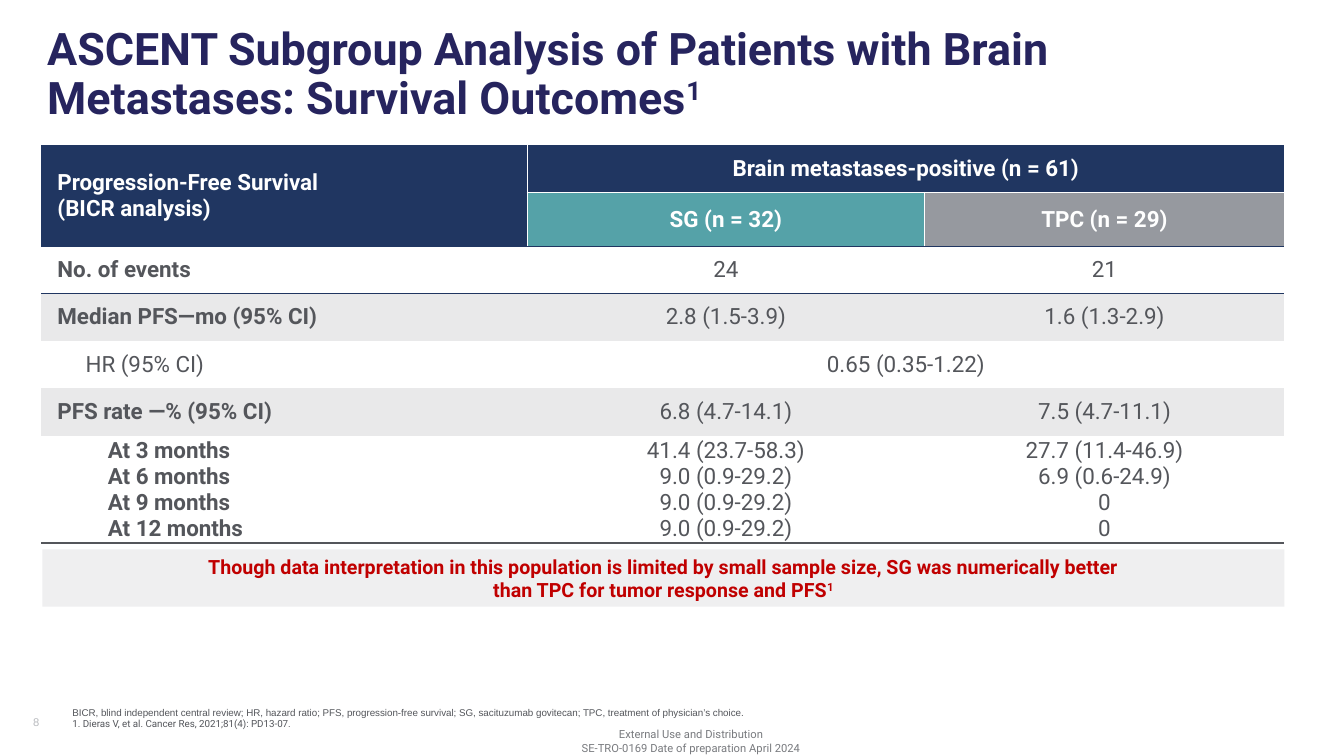
import dataclasses

import pptx
import pptx.dml.color
import pptx.enum.shapes
import pptx.enum.text
import pptx.oxml
import pptx.oxml.ns
import pptx.util

ALIGN = pptx.enum.text.PP_ALIGN
ANCHOR = pptx.enum.text.MSO_ANCHOR


@dataclasses.dataclass(frozen=True)
class Theme:
    heading_font: str = "Roboto"
    note_font: str = "Arial"
    title: str = "26245E"
    navy: str = "203661"
    teal: str = "55A2A8"
    gray: str = "96999F"
    stripe: str = "E9E9EA"
    white: str = "FFFFFF"
    body: str = "54565B"
    footer: str = "787A7E"
    number: str = "B9BBBF"
    banner: str = "DCDDDF"
    alert: str = "C00000"
    title_size: int = 32
    table_size: int = 16
    banner_size: int = 14
    footer_size: int = 8
    note_size: int = 7


THEME = Theme()
GRID = pptx.util.Inches(0.1)
TABLE_COLUMNS = (48.2, 39.4, 35.7)
TABLE_ROWS = (4.7, 5.1, 4.7, 4.7, 4.7, 4.7, 10.4)
HEADER_ROWS = 2
OUTCOMES = (
    ("Progression-Free Survival\v(BICR analysis)", "Brain metastases-positive (n = 61)", ""),
    ("", "SG (n = 32)", "TPC (n = 29)"),
    ("No. of events", "24", "21"),
    ("Median PFS—mo (95% CI)", "2.8 (1.5-3.9)", "1.6 (1.3-2.9)"),
    ("HR (95% CI)", "0.65 (0.35-1.22)", ""),
    ("PFS rate —% (95% CI)", "6.8 (4.7-14.1)", "7.5 (4.7-11.1)"),
    (
        "At 3 months\nAt 6 months\nAt 9 months\nAt 12 months",
        "41.4 (23.7‑58.3)\n9.0 (0.9‑29.2)\n9.0 (0.9‑29.2)\n9.0 (0.9‑29.2)",
        "27.7 (11.4‑46.9)\n6.9 (0.6‑24.9)\n0\n0",
    ),
)
HR_ROW, RATES_ROW = 4, 6
STRIPED_ROWS = (3, 5)
ROW_INDENTS = {HR_ROW: 2.8, RATES_ROW: 5}
RULES = {0: (THEME.navy, 1), 2: (THEME.navy, 1), 3: (THEME.navy, 1), 7: (THEME.body, 2)}


def grid(*counts):
    return [round(count * GRID) for count in counts]


def rgb(color):
    return pptx.dml.color.RGBColor.from_string(color)


def style_paragraph(paragraph, size, color, bold=False, align=ALIGN.LEFT, font=THEME.heading_font):
    paragraph.alignment = align
    paragraph.font.name = font
    paragraph.font.size = pptx.util.Pt(size)
    paragraph.font.bold = bold
    paragraph.font.color.rgb = rgb(color)


def add_superscript(paragraph, text):
    run = paragraph.add_run()
    run.text = text
    run.font._element.set("baseline", "30000")


def add_text(slide, box, text, anchor):
    frame = slide.shapes.add_textbox(*grid(*box)).text_frame
    frame.word_wrap = True
    frame.vertical_anchor = anchor
    frame.text = text
    return frame.paragraphs


def add_title(slide):
    text = "ASCENT Subgroup Analysis of Patients with Brain Metastases: Survival Outcomes"
    paragraph = add_text(slide, (3.7, 2.2, 125.6, 10), text, ANCHOR.TOP)[0]
    add_superscript(paragraph, "1")
    paragraph.line_spacing = 0.9
    style_paragraph(paragraph, THEME.title_size, THEME.title, bold=True)


def horizontal_rule(line, column):
    if line == 1 and column > 0:
        return THEME.white, 1
    return RULES.get(line)


def vertical_rule(line, row):
    if (line == 1 and row < HEADER_ROWS) or (line == 2 and row == 1):
        return THEME.white, 1
    return None


def set_borders(cell, row, column):
    sides = {
        "lnL": vertical_rule(column, row),
        "lnR": vertical_rule(column + 1, row),
        "lnT": horizontal_rule(row, column),
        "lnB": horizontal_rule(row + 1, column),
    }
    properties = cell._tc.get_or_add_tcPr()
    namespace = pptx.oxml.ns.nsdecls("a")
    for position, (side, rule) in enumerate(sides.items()):
        if rule:
            color, points = rule
            width = pptx.util.Pt(points)
            paint = f'<a:solidFill><a:srgbClr val="{color}"/></a:solidFill>'
        else:
            width, paint = 0, "<a:noFill/>"
        border = pptx.oxml.parse_xml(f'<a:{side} {namespace} w="{width}">{paint}</a:{side}>')
        properties.insert(position, border)


def cell_fill(row, column):
    if row == 1 and column > 0:
        return (THEME.teal, THEME.gray)[column - 1]
    if row < HEADER_ROWS:
        return THEME.navy
    return THEME.stripe if row in STRIPED_ROWS else THEME.white


def fill_cell(cell, row, column, text):
    cell.fill.solid()
    cell.fill.fore_color.rgb = rgb(cell_fill(row, column))
    cell.vertical_anchor = ANCHOR.MIDDLE
    cell.margin_left, cell.margin_right = grid(1.6, 1.6)
    cell.margin_top = cell.margin_bottom = 0
    cell.text = text
    header = row < HEADER_ROWS
    for paragraph in cell.text_frame.paragraphs:
        if column == 0 and row in ROW_INDENTS:
            indent = grid(ROW_INDENTS[row])[0]
            properties = paragraph._p.get_or_add_pPr()
            properties.set("marL", str(indent))
            properties.set("indent", "0")
        style_paragraph(
            paragraph,
            THEME.table_size,
            THEME.white if header else THEME.body,
            bold=header or (column == 0 and row != HR_ROW),
            align=ALIGN.CENTER if column else ALIGN.LEFT,
        )
    set_borders(cell, row, column)


def add_outcomes(slide):
    box = grid(4.1, 14.4, sum(TABLE_COLUMNS), sum(TABLE_ROWS))
    table = slide.shapes.add_table(len(TABLE_ROWS), len(TABLE_COLUMNS), *box).table
    table.first_row = table.horz_banding = False
    for column, width in zip(table.columns, grid(*TABLE_COLUMNS)):
        column.width = width
    for row, height in zip(table.rows, grid(*TABLE_ROWS)):
        row.height = height
    for row, texts in enumerate(OUTCOMES):
        for column, text in enumerate(texts):
            fill_cell(table.cell(row, column), row, column, text)
    table.cell(0, 0).merge(table.cell(1, 0))
    for row in (0, HR_ROW):
        table.cell(row, 1).merge(table.cell(row, 2))


def add_banner(slide):
    shape = slide.shapes.add_shape(
        pptx.enum.shapes.MSO_SHAPE.RECTANGLE, *grid(4.2, 54.5, 123.2, 5.7)
    )
    shape.shadow.inherit = False
    shape.line.fill.background()
    shape.fill.solid()
    shape.fill.fore_color.rgb = rgb(THEME.banner)
    color = shape._element.spPr.find(".//" + pptx.oxml.ns.qn("a:srgbClr"))
    namespace = pptx.oxml.ns.nsdecls("a")
    color.append(pptx.oxml.parse_xml(f'<a:alpha {namespace} val="45000"/>'))
    frame = shape.text_frame
    frame.word_wrap = True
    frame.vertical_anchor = ANCHOR.MIDDLE
    frame.text = (
        "Though data interpretation in this population is limited by small sample size, "
        "SG was numerically better\vthan TPC for tumor response and PFS"
    )
    paragraph = frame.paragraphs[0]
    add_superscript(paragraph, "1")
    style_paragraph(paragraph, THEME.banner_size, THEME.alert, bold=True, align=ALIGN.CENTER)


def add_notes_and_footer(slide):
    notes = (
        "BICR, blind independent central review; HR, hazard ratio; PFS, progression‑free survival; "
        "SG, sacituzumab govitecan; TPC, treatment of physician’s choice.\n"
        "1. Dieras V, et al. Cancer Res, 2021;81(4): PD13-07."
    )
    paragraphs = add_text(slide, (6.2, 65.2, 118, 7.7), notes, ANCHOR.BOTTOM)
    for paragraph, font in zip(paragraphs, (THEME.note_font, THEME.heading_font)):
        style_paragraph(paragraph, THEME.note_size, THEME.body, font=font)
    footer = "External Use and Distribution\nSE-TRO-0169 Date of preparation April 2024"
    for paragraph in add_text(slide, (51.4, 71.9, 34.3, 3.2), footer, ANCHOR.MIDDLE):
        style_paragraph(paragraph, THEME.footer_size, THEME.footer, align=ALIGN.CENTER)
    number = add_text(slide, (2.3, 70, 30, 3.2), "8", ANCHOR.MIDDLE)[0]
    style_paragraph(number, THEME.footer_size, THEME.number, font=THEME.note_font)


def main():
    presentation = pptx.Presentation()
    presentation.slide_width, presentation.slide_height = grid(133.3, 75)
    slide = presentation.slides.add_slide(presentation.slide_layouts[6])
    add_title(slide)
    add_outcomes(slide)
    add_banner(slide)
    add_notes_and_footer(slide)
    presentation.save("out.pptx")


if __name__ == "__main__":
    main()
